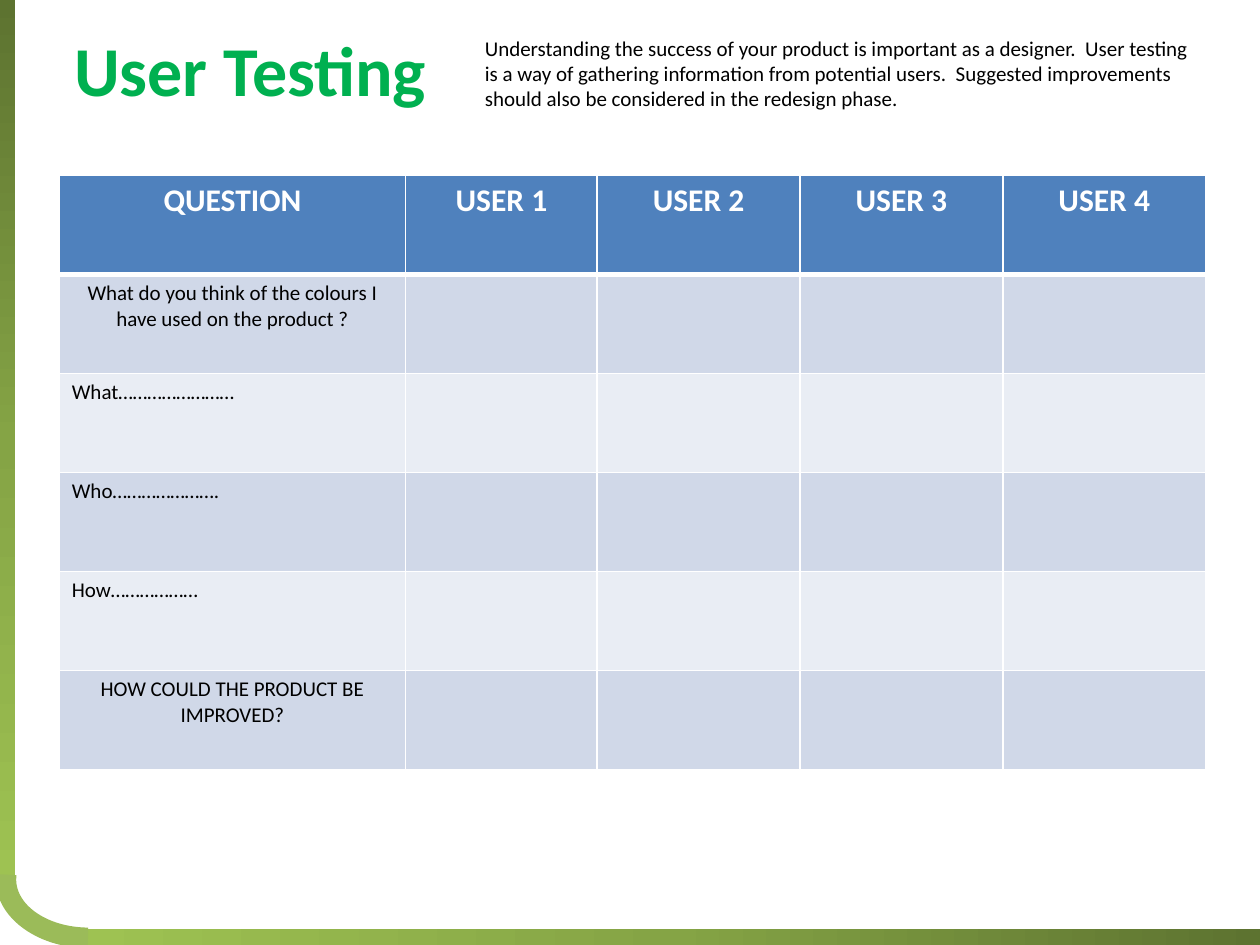
from lxml import etree
from pptx import Presentation
from pptx.dml.color import RGBColor
from pptx.enum.shapes import MSO_SHAPE
from pptx.enum.text import MSO_ANCHOR, MSO_AUTO_SIZE, PP_ALIGN
from pptx.oxml.ns import qn
from pptx.util import Inches, Pt

RECT, ARC = MSO_SHAPE.RECTANGLE, MSO_SHAPE.BLOCK_ARC
LEFT, MID = PP_ALIGN.LEFT, PP_ALIGN.CENTER
TOP, FIXED = MSO_ANCHOR.TOP, MSO_AUTO_SIZE.NONE

FONT = "Calibri"
HUES = {
    "title": "00B050", "text": "000000", "white": "FFFFFF",
    "head": "4F81BD", "odd": "D0D8E8", "even": "E9EDF4",
    "arc": "9BBB59", "dark": "5D7330", "leaf": "85A445", "lime": "9EC252",
}
TITLE = "User Testing"
INTRO = ("Understanding the success of your product is important as a designer.  "
         "User testing is a way of gathering information from potential users.  "
         "Suggested improvements should also be considered in the redesign phase.")
HEADS = ["QUESTION"] + [f"USER {n}" for n in range(1, 5)]
ASKS = [
    ("What do you think of the colours I have used on the product ?", MID),
    ("What……………………", LEFT),
    ("Who………………….", LEFT),
    ("How………………", LEFT),
    ("HOW COULD THE PRODUCT BE IMPROVED?", MID),
]
COLS = [2.75, 1.52, 1.61, 1.61, 1.61]
ROW = 4.72 / (len(ASKS) + 1)
BARS = [((-0.04, 0, 0.16, 6.98), 90), ((0.67, 7.37, 9.33, 0.16), 180)]
BEND = (0.16, 6.24, 1.09, 1.48)


def box(at):
    return [Inches(v) for v in at]


def hue(name):
    return RGBColor.from_string(HUES[name])


def write(frame, text, size=12, color="text", bold=False, align=LEFT):
    para = frame.paragraphs[0]
    para.alignment = align
    run = para.add_run()
    run.text = text
    font = run.font
    font.name, font.size, font.bold = FONT, Pt(size), bold
    font.color.rgb = hue(color)


def add_shape(slide, kind, at):
    shape = slide.shapes.add_shape(kind, *box(at))
    shape.shadow.inherit = False
    shape.line.fill.background()
    return shape


def blend(shape, angle):
    shape.fill.gradient()
    shape.fill.gradient_angle = 0
    grad = shape._element.spPr.find(qn("a:gradFill"))
    stops = grad.find(qn("a:gsLst"))
    for stop in list(stops):
        stops.remove(stop)
    for pos, name in ((0, "dark"), (50, "leaf"), (100, "lime")):
        stop = etree.SubElement(stops, qn("a:gs"), pos=str(pos * 1000))
        etree.SubElement(stop, qn("a:srgbClr"), val=HUES[name])
    grad.find(qn("a:lin")).set("ang", str(angle * 60000))


def edge(cell, base):
    props = cell._tc.get_or_add_tcPr()
    for side, width in (("L", 1), ("R", 1), ("T", 1), ("B", base)):
        line = etree.SubElement(props, qn(f"a:ln{side}"), w=str(Pt(width)))
        fill = etree.SubElement(line, qn("a:solidFill"))
        etree.SubElement(fill, qn("a:srgbClr"), val=HUES["white"])


def add_grid(slide):
    at = (0.47, 1.39, sum(COLS), ROW * (len(ASKS) + 1))
    grid = slide.shapes.add_table(len(ASKS) + 1, len(COLS), *box(at)).table
    for col, width in zip(grid.columns, COLS):
        col.width = Inches(width)
    for r, row in enumerate(grid.rows):
        row.height = Inches(ROW)
        fill = "head" if r == 0 else "odd" if r % 2 else "even"
        for cell in row.cells:
            edge(cell, 3 if r == 0 else 1)
            cell.fill.solid()
            cell.fill.fore_color.rgb = hue(fill)
    for c, head in enumerate(HEADS):
        write(grid.cell(0, c).text_frame, head, size=18, color="white", bold=True, align=MID)
    for r, (ask, align) in enumerate(ASKS, 1):
        write(grid.cell(r, 0).text_frame, ask, align=align)


def main():
    deck = Presentation()
    deck.slide_width, deck.slide_height = Inches(10), Inches(7.5)
    slide = deck.slides.add_slide(deck.slide_layouts[5])

    for at, angle in BARS:
        blend(add_shape(slide, RECT, at), angle)
    bend = add_shape(slide, ARC, BEND)
    bend.rotation = 270
    for i, value in enumerate((108.48, 164.03, 0.15)):
        bend.adjustments[i] = value
    bend.fill.solid()
    bend.fill.fore_color.rgb = hue("arc")

    title = slide.shapes.title
    title.left, title.top, title.width, title.height = box((0.47, 0.16, 3.03, 0.77))
    frame = title.text_frame
    frame.word_wrap, frame.auto_size, frame.vertical_anchor = False, FIXED, TOP
    write(frame, TITLE, size=40, color="title", bold=True, align=MID)

    intro = slide.shapes.add_textbox(*box((3.75, 0.23, 5.86, 0.71))).text_frame
    intro.word_wrap = True
    write(intro, INTRO)
    add_grid(slide)
    deck.save("out.pptx")


if __name__ == "__main__":
    main()
